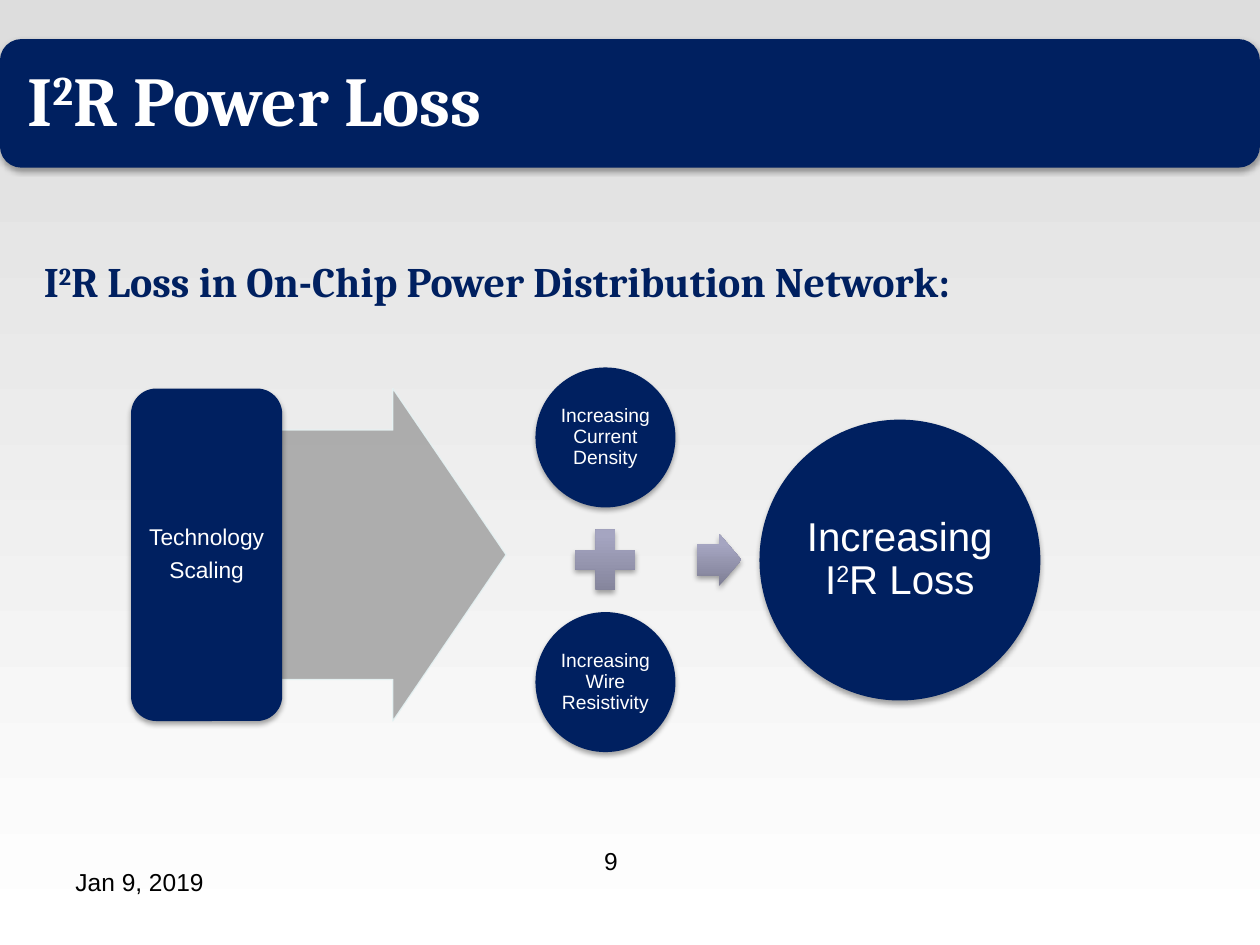
"""Build the I²R power loss slide."""
from dataclasses import dataclass

from lxml.etree import SubElement
from pptx import Presentation
from pptx.dml.color import RGBColor
from pptx.enum.shapes import MSO_SHAPE
from pptx.enum.text import MSO_ANCHOR, PP_ALIGN
from pptx.oxml.ns import qn
from pptx.util import Pt


@dataclass(frozen=True)
class Theme:
    navy: str = "002060"
    white: str = "FFFFFF"
    black: str = "000000"
    gray: str = "A6A6A6"
    edge: str = "E7F3F4"
    backdrop: tuple = (("DDDDDD", 0), ("FFFFFF", 1))
    accent: tuple = (("7F7F95", 0), ("A5A5C1", 0.8))
    heading_font: str = "Cambria"
    body_font: str = "Arial"
    title: int = 40
    subtitle: int = 24
    result: int = 23
    footer: int = 14
    source: int = 13
    cause: int = 11


class SlideBuilder:
    def __init__(self, slide, theme):
        self.slide = slide
        self.theme = theme

    def paint_gradient(self, fill, stops, angle):
        fill.gradient()
        fill.gradient_angle = angle
        for stop, (color, position) in zip(fill.gradient_stops, stops):
            stop.color.rgb = RGBColor.from_string(color)
            stop.position = position

    def background(self):
        self.paint_gradient(self.slide.background.fill, self.theme.backdrop, 270)

    def shape(self, kind, box, shadow=True):
        shape = self.slide.shapes.add_shape(kind, *map(Pt, box))
        shape.shadow.inherit = False
        shape.line.fill.background()
        if shadow:
            effects = shape._element.spPr.find(qn("a:effectLst"))
            outer = SubElement(effects, qn("a:outerShdw"), blurRad=str(Pt(3.1)),
                               dist=str(Pt(1.8)), dir="5400000", rotWithShape="0")
            color = SubElement(outer, qn("a:srgbClr"), val=self.theme.black)
            SubElement(color, qn("a:alpha"), val="35000")
        return shape

    def panel(self, kind, box, lines, size, inset, **styles):
        shape = self.shape(kind, box)
        shape.fill.solid()
        shape.fill.fore_color.rgb = RGBColor.from_string(self.theme.navy)
        styles = {"align": PP_ALIGN.CENTER, "spacing": 0.9, **styles}
        self.set_text(shape.text_frame, lines, size, self.theme.white, inset,
                      MSO_ANCHOR.MIDDLE, **styles)

    def operator(self, kind, box, adjustments=()):
        shape = self.shape(kind, box)
        self.paint_gradient(shape.fill, self.theme.accent, 90)
        for index, value in enumerate(adjustments):
            shape.adjustments[index] = value

    def flow_arrow(self, box):
        shape = self.shape(MSO_SHAPE.RIGHT_ARROW, box, shadow=False)
        shape.adjustments[0] = 0.75
        shape.line.width = Pt(0.75)
        for fill, color in ((shape.fill, self.theme.gray), (shape.line.fill, self.theme.edge)):
            fill.solid()
            fill.fore_color.rgb = RGBColor.from_string(color)
        for color in shape._element.spPr.iter(qn("a:srgbClr")):
            SubElement(color, qn("a:alpha"), val="90000")

    def label(self, box, text, size, color, **styles):
        text_box = self.slide.shapes.add_textbox(*map(Pt, box))
        self.set_text(text_box.text_frame, [text], size, color, (7.2, 3.6),
                      MSO_ANCHOR.TOP, **styles)

    def set_text(self, frame, lines, size, color, inset, anchor, font=None, bold=False,
                 align=PP_ALIGN.LEFT, spacing=1.0, gap=0):
        """Set lines of text, raising the parts enclosed in carets."""
        horizontal, vertical = map(Pt, inset)
        frame_format = {"word_wrap": True, "vertical_anchor": anchor,
                        "margin_left": horizontal, "margin_right": horizontal,
                        "margin_top": vertical, "margin_bottom": vertical}
        for name, value in frame_format.items():
            setattr(frame, name, value)
        font_format = {"name": font or self.theme.body_font, "size": Pt(size), "bold": bold}
        for number, line in enumerate(lines):
            paragraph = frame.add_paragraph() if number else frame.paragraphs[0]
            paragraph_format = {"alignment": align, "line_spacing": spacing,
                                "space_after": Pt(gap)}
            for name, value in paragraph_format.items():
                setattr(paragraph, name, value)
            for index, part in enumerate(line.split("^")):
                run = paragraph.add_run()
                run.text = part
                for name, value in font_format.items():
                    setattr(run.font, name, value)
                run.font.color.rgb = RGBColor.from_string(color)
                if index % 2:
                    run._r.get_or_add_rPr().set("baseline", "30000")


def main():
    presentation = Presentation()
    presentation.slide_width, presentation.slide_height = Pt(720), Pt(540)
    slide = presentation.slides.add_slide(presentation.slide_layouts[6])
    theme = Theme()
    builder = SlideBuilder(slide, theme)
    heading = {"font": theme.heading_font, "bold": True}

    builder.background()
    builder.panel(MSO_SHAPE.ROUNDED_RECTANGLE, (0, 22.3, 720, 73.5), ["I^2^R Power Loss"],
                  theme.title, (12.2, 12.2), align=PP_ALIGN.LEFT, **heading)
    builder.label((18, 142.6, 630, 36), "I^2^R Loss in On-Chip Power Distribution Network:",
                  theme.subtitle, theme.navy, align=PP_ALIGN.JUSTIFY, **heading)

    causes = ("Increasing Current Density", "Increasing Wire Resistivity")
    for index, cause in enumerate(causes):
        builder.panel(MSO_SHAPE.OVAL, (306, 210 + 139.8 * index, 80, 80), [cause],
                      theme.cause, (1.4, 1.4))
    builder.operator(MSO_SHAPE.MATH_PLUS, (322.6, 296.6, 46.6, 46.6))
    builder.operator(MSO_SHAPE.RIGHT_ARROW, (398.2, 305, 25.5, 29.8), (0.6, 0.5))
    builder.panel(MSO_SHAPE.OVAL, (434, 239.8, 160.5, 160.5), ["Increasing I^2^R Loss"],
                  theme.result, (2.2, 2.2))

    builder.flow_arrow((159.8, 222, 129.4, 190))
    builder.panel(MSO_SHAPE.ROUNDED_RECTANGLE, (74.9, 222, 86.4, 190),
                  ["Technology", "Scaling"], theme.source, (3.6, 2.2), gap=5)

    builder.label((36, 492, 168, 37.5), "Jan 9, 2019", theme.footer, theme.black)
    builder.label((192, 480, 168, 37.5), "9", theme.footer, theme.black, align=PP_ALIGN.RIGHT)
    presentation.save("out.pptx")


if __name__ == "__main__":
    main()
